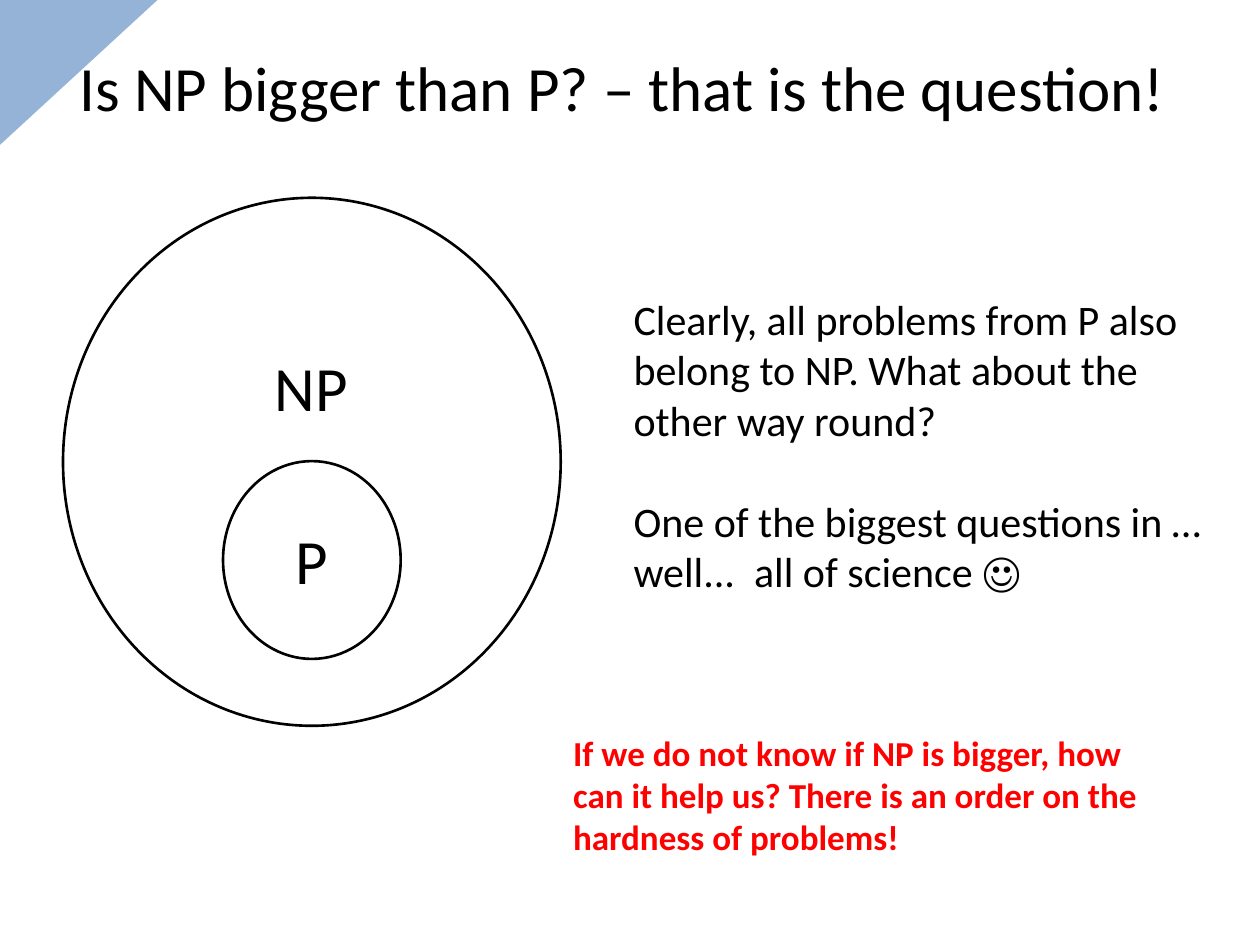
import pptx
import pptx.dml.color
import pptx.enum.shapes
import pptx.enum.text
import pptx.util

Inches = pptx.util.Inches
Pt = pptx.util.Pt
Shape = pptx.enum.shapes.MSO_SHAPE
Align = pptx.enum.text.PP_ALIGN
Anchor = pptx.enum.text.MSO_ANCHOR
AutoSize = pptx.enum.text.MSO_AUTO_SIZE

BLACK = pptx.dml.color.RGBColor(0x00, 0x00, 0x00)
RED = pptx.dml.color.RGBColor(0xFF, 0x00, 0x00)
LIGHT_BLUE = pptx.dml.color.RGBColor(0x95, 0xB3, 0xD7)
FONT = "Calibri"


def lengths(box):
    """Turn left, top, width and height in inches into lengths."""
    return [Inches(value) for value in box]


def format_text(frame, size, color=BLACK, bold=False, align=Align.LEFT):
    """Format every paragraph and run of a text frame."""
    for para in frame.paragraphs:
        para.alignment = align
        for span in para.runs:
            span.font.name = FONT
            span.font.size = Pt(size)
            span.font.bold = bold
            span.font.color.rgb = color


def add_text(page, box, text, size, wrap=True, **style):
    """Add a text box and return its text frame."""
    frame = page.shapes.add_textbox(*lengths(box)).text_frame
    frame.word_wrap = wrap
    frame.auto_size = AutoSize.SHAPE_TO_FIT_TEXT
    frame.text = text
    format_text(frame, size, **style)
    return frame


def place_title(page, box, text):
    """Move and format the title placeholder."""
    title = page.shapes.title
    title.left, title.top, title.width, title.height = lengths(box)
    frame = title.text_frame
    frame.text = text
    frame.auto_size = AutoSize.NONE
    frame.vertical_anchor = Anchor.MIDDLE
    format_text(frame, 36)


def add_set_outline(page, box):
    """Add an unfilled ellipse that stands for a set of problems."""
    ellipse = page.shapes.add_shape(Shape.OVAL, *lengths(box))
    ellipse.shadow.inherit = False
    ellipse.fill.background()
    ellipse.line.color.rgb = BLACK
    ellipse.line.width = Pt(1.5)


def add_set_diagram(page, box):
    """Draw P as a subset inside NP."""
    left, top, width, height = box
    add_set_outline(page, box)
    add_set_outline(page, (left + 1.27, top + 2.09, 1.41, 1.57))
    label_left = left + (width - 0.79) / 2
    add_text(page, (label_left, top + 1.15, 0.79, 0.71), "NP", 36, wrap=False)
    add_text(page, (label_left, top + 2.52, 0.79, 0.71), "P", 36, align=Align.CENTER)


def add_discussion(page, box):
    """Add the question and the remark that follows it after a gap."""
    lines = (
        "Clearly, all problems from P also belong to NP. What about the other way round?",
        "One of the biggest questions in …",
        "well...  all of science ☺",
    )
    frame = add_text(page, box, "\n".join(lines), 24)
    frame.paragraphs[1].space_before = Pt(29)


def add_corner(page, box):
    """Fill the top left corner with a triangle."""
    corner = page.shapes.add_shape(Shape.ISOSCELES_TRIANGLE, *lengths(box))
    corner.adjustments[0] = 0
    corner.element.spPr.xfrm.set("flipV", "1")
    corner.shadow.inherit = False
    corner.fill.solid()
    corner.fill.fore_color.rgb = LIGHT_BLUE
    corner.line.fill.background()


def main():
    """Build and save the slide."""
    deck = pptx.Presentation()
    deck.slide_width, deck.slide_height = Inches(10), Inches(7.5)
    page = deck.slides.add_slide(deck.slide_layouts.get_by_name("Title Only"))
    place_title(page, (0.53, 0.29, 9, 0.79), "Is NP bigger than P? – that is the question!")
    add_set_diagram(page, (0.5, 1.57, 3.95, 4.19))
    add_discussion(page, (4.93, 2.28, 4.88, 2.52))
    add_text(
        page,
        (4.45, 5.76, 4.78, 1.11),
        "If we do not know if NP is bigger, how can it help us? "
        "There is an order on the hardness of problems!",
        20,
        color=RED,
        bold=True,
    )
    add_corner(page, (0, 0, 1.25, 1.15))
    deck.save("out.pptx")


if __name__ == "__main__":
    main()
